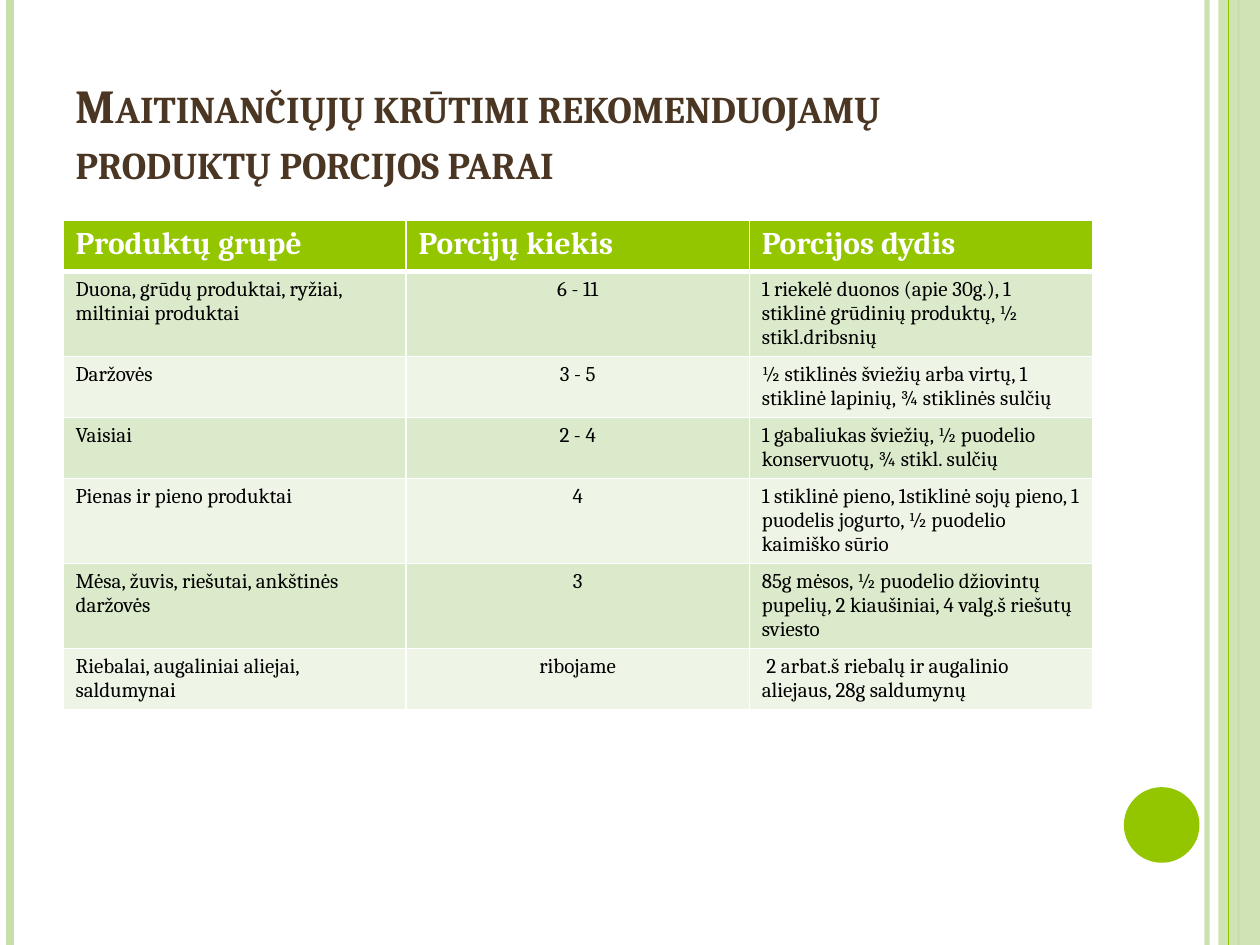
"""Build a slide with a table of recommended daily food portions for breastfeeding mothers."""
import pptx
import pptx.dml.color
import pptx.enum.shapes
import pptx.enum.text
import pptx.oxml
import pptx.oxml.ns
import pptx.util

WIDTH, HEIGHT = pptx.util.Inches(10), pptx.util.Inches(7.5)
LEFT, CONTENT_WIDTH = 0.05, 0.817
FONT = "Cambria"
COLORS = {
    "green": "94C600",
    "pale": "C8DFAB",
    "brown": "4A3622",
    "white": "FFFFFF",
    "black": "000000",
    "odd": "DCEACC",
    "even": "EEF5E7",
}
HEADINGS = ("Produktų grupė", "Porcijų kiekis", "Porcijos dydis")
PORTIONS = (
    ("Duona, grūdų produktai, ryžiai, miltiniai produktai", "6 - 11",
     "1 riekelė duonos (apie 30g.), 1 stiklinė grūdinių produktų, ½ stikl.dribsnių"),
    ("Daržovės", "3 - 5",
     "½ stiklinės šviežių arba virtų, 1 stiklinė lapinių, ¾ stiklinės sulčių"),
    ("Vaisiai", "2 - 4",
     "1 gabaliukas šviežių, ½ puodelio konservuotų, ¾ stikl. sulčių"),
    ("Pienas ir pieno produktai", "4",
     "1 stiklinė pieno, 1stiklinė sojų pieno, 1 puodelis jogurto, ½ puodelio kaimiško sūrio"),
    ("Mėsa, žuvis, riešutai, ankštinės daržovės", "3",
     "85g mėsos, ½ puodelio džiovintų pupelių, 2 kiaušiniai, 4 valg.š riešutų sviesto"),
    ("Riebalai, augaliniai aliejai, saldumynai", "ribojame",
     " 2 arbat.š riebalų ir augalinio aliejaus, 28g saldumynų"),
)


def color(name):
    return pptx.dml.color.RGBColor.from_string(COLORS[name])


def share(left, top, width, height):
    return int(left * WIDTH), int(top * HEIGHT), int(width * WIDTH), int(height * HEIGHT)


def xml_element(tag, content=""):
    namespace = pptx.oxml.ns.nsdecls("a")
    return pptx.oxml.parse_xml(f"<a:{tag} {namespace}>{content}</a:{tag}>")


def set_opacity(fill_owner, percent):
    for color_element in fill_owner.iter(pptx.oxml.ns.qn("a:srgbClr")):
        alpha = xml_element("alpha")
        alpha.set("val", str(percent * 1000))
        color_element.append(alpha)


def add_run(paragraph, text, size, color_name, bold=False):
    run = paragraph.add_run()
    run.text = text
    run.font.name = FONT
    run.font.size = pptx.util.Pt(size)
    run.font.bold = bold
    run.font.color.rgb = color(color_name)
    return run


def add_vertical_line(slide, x, weight, color_name, opacity=100):
    position = int(x * WIDTH)
    line = slide.shapes.add_connector(
        pptx.enum.shapes.MSO_CONNECTOR.STRAIGHT, position, 0, position, HEIGHT)
    line.line.color.rgb = color(color_name)
    line.line.width = pptx.util.Pt(weight)
    properties = line._element.spPr
    if opacity < 100:
        set_opacity(properties, opacity)
    properties.append(xml_element("effectLst"))


def add_filled_shape(slide, kind, box, color_name, opacity=100):
    shape = slide.shapes.add_shape(kind, *share(*box))
    shape.shadow.inherit = False
    shape.fill.solid()
    shape.fill.fore_color.rgb = color(color_name)
    shape.line.fill.background()
    if opacity < 100:
        set_opacity(shape._element.spPr, opacity)


def add_decoration(slide):
    shapes = pptx.enum.shapes.MSO_SHAPE
    add_vertical_line(slide, 0.958, 3, "pale", 93)
    add_vertical_line(slide, 0.008, 4.5, "pale")
    add_vertical_line(slide, 0.983, 1.5, "pale")
    add_filled_shape(slide, shapes.RECTANGLE, (0.967, 0, 0.033, 1), "pale", 87)
    add_vertical_line(slide, 0.975, 0.75, "green")
    add_filled_shape(slide, shapes.OVAL, (0.892, 0.833, 0.06, 0.08), "green")


def format_title(slide, text):
    title = slide.shapes.title
    title.left, title.top, title.width, title.height = share(LEFT, 0.04, CONTENT_WIDTH, 0.167)
    frame = title.text_frame
    frame.auto_size = pptx.enum.text.MSO_AUTO_SIZE.NONE
    frame.vertical_anchor = pptx.enum.text.MSO_ANCHOR.BOTTOM
    paragraph = frame.paragraphs[0]
    paragraph.alignment = pptx.enum.text.PP_ALIGN.LEFT
    run = add_run(paragraph, text, 27, "brown", True)
    run.font._element.set("cap", "small")


def set_borders(cell, bottom_weight):
    properties = cell._tc.get_or_add_tcPr()
    for side, weight in (("L", 1), ("R", 1), ("T", 1), ("B", bottom_weight)):
        border = xml_element(
            f"ln{side}",
            f'<a:solidFill><a:srgbClr val="{COLORS["white"]}"/></a:solidFill>')
        border.set("w", str(pptx.util.Pt(weight)))
        properties.append(border)


def fill_cell(cell, text, row, column):
    is_heading = row == 0
    set_borders(cell, 3 if is_heading else 1)
    cell.fill.solid()
    cell.fill.fore_color.rgb = color("green" if is_heading else ("even", "odd")[row % 2])
    paragraph = cell.text_frame.paragraphs[0]
    if is_heading:
        add_run(paragraph, text, 18, "white", True)
    else:
        if column == 1:
            paragraph.alignment = pptx.enum.text.PP_ALIGN.CENTER
        add_run(paragraph, text, 12, "black")


def add_portion_table(slide):
    rows = (HEADINGS,) + PORTIONS
    row_height = 0.054
    box = share(LEFT, 0.233, CONTENT_WIDTH, row_height * len(rows))
    table = slide.shapes.add_table(len(rows), len(HEADINGS), *box).table
    for row, texts in enumerate(rows):
        for column, text in enumerate(texts):
            fill_cell(table.cell(row, column), text, row, column)


def main():
    presentation = pptx.Presentation()
    presentation.slide_width, presentation.slide_height = WIDTH, HEIGHT
    slide = presentation.slides.add_slide(presentation.slide_layouts[5])
    add_decoration(slide)
    format_title(slide, "Maitinančiųjų krūtimi rekomenduojamų produktų porcijos parai")
    add_portion_table(slide)
    presentation.save("out.pptx")


if __name__ == "__main__":
    main()
